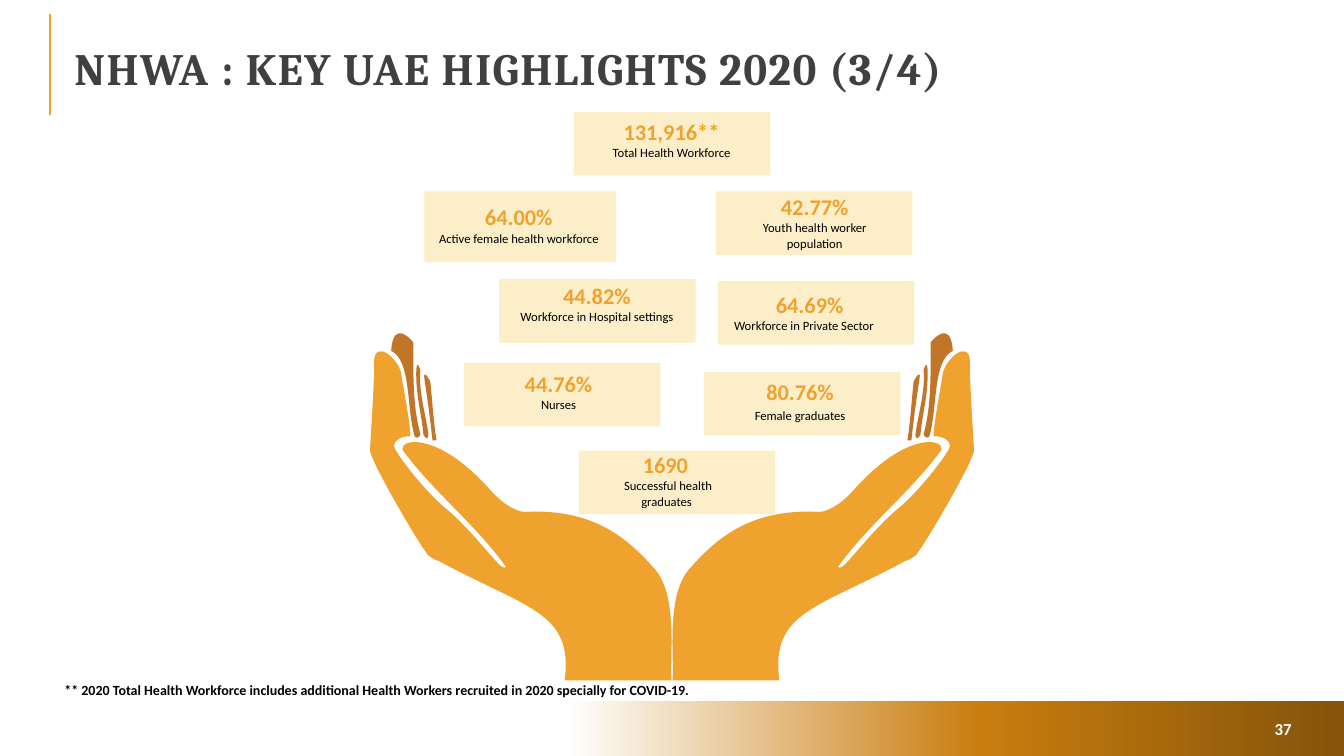
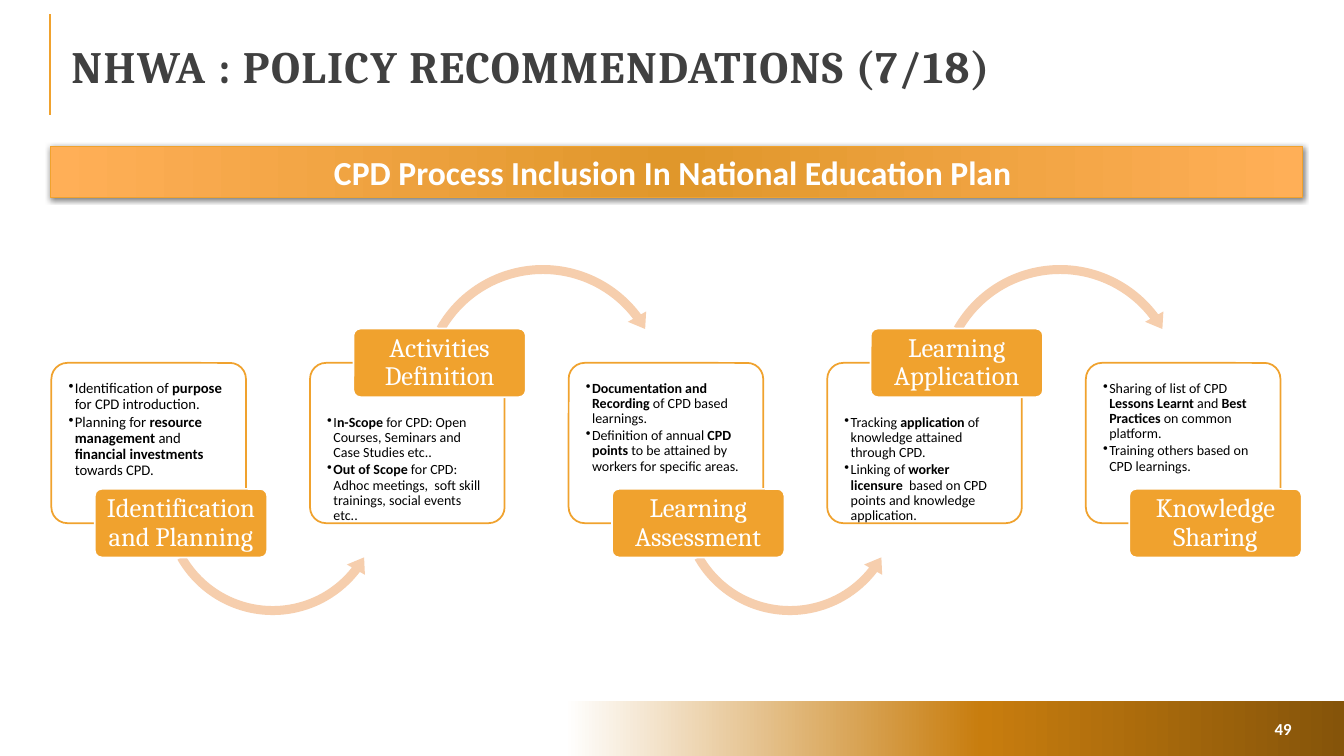
from lxml.etree import SubElement as Sub
from pptx import Presentation
from pptx.dml.color import RGBColor as RGB
from pptx.enum.shapes import MSO_CONNECTOR as CON, MSO_SHAPE as SHAPE
from pptx.enum.text import MSO_ANCHOR as ANCHOR, PP_ALIGN as ALIGN
from pptx.oxml.ns import qn
from pptx.util import Inches, Pt

INK = {
    "gold": "F0A22E", "brown": "C17529", "cream": "FBEEC9", "peach": "F6CEAD",
    "white": "FFFFFF", "black": "000000", "gray": "404040",
    "amber": "C87D0E", "dark": "85540A", "light": "FFAF57", "ochre": "E0972B",
}
BODY, HEAD = "Calibri", "Cambria"
AXIS = 13.33

PALM = [(4.22, 5.47), [
    (4.17, 5.42, 3.65, 4.54, 3.67, 4.46), (3.68, 4.28, 3.72, 3.66, 3.71, 3.58),
    (3.72, 3.37, 3.95, 3.55, 3.98, 3.71), (4, 3.85, 4.07, 4.2, 4.07, 4.33),
    (4, 4.32, 3.87, 4.37, 3.92, 4.46), (4.01, 4.61, 4.25, 4.91, 4.44, 5.06),
    (4.65, 5.24, 4.85, 5.5, 4.95, 5.6), (5, 5.65, 5.04, 5.64, 5, 5.6),
    (4.72, 5.21, 4.28, 4.86, 3.99, 4.46), (3.98, 4.34, 4.37, 4.3, 4.87, 4.87),
    (4.96, 4.97, 5.09, 5.07, 5.2, 5.08), (5.89, 5.04, 6.23, 5.35, 6.48, 5.63),
    (6.73, 5.89, 6.64, 6.5, 6.66, 6.75), (5.6, 6.75),
    (5.69, 6.07, 5.23, 6.04, 4.36, 5.57), (4.3, 5.55, 4.23, 5.51, 4.22, 5.47)]]
FINGERS = [
    [(3.88, 3.48), [
        (3.9, 3.16, 4.08, 3.37, 4.1, 3.4), (4.1, 3.7, 4.09, 4.02, 4.17, 4.31),
        (4.16, 4.35, 4.11, 4.35, 4.11, 4.32), (4.03, 4.04, 4.08, 3.58, 3.88, 3.48)]],
    [(4.13, 3.66), [
        (4.14, 3.57, 4.16, 3.65, 4.17, 3.67), (4.15, 3.88, 4.22, 4.09, 4.25, 4.31),
        (4.25, 4.35, 4.23, 4.37, 4.2, 4.31), (4.18, 4.09, 4.12, 3.91, 4.13, 3.66)]],
    [(4.21, 3.76), [
        (4.19, 3.65, 4.27, 3.77, 4.27, 3.8), (4.29, 4, 4.3, 4.18, 4.33, 4.37),
        (4.29, 4.37), (4.27, 4.17, 4.24, 3.96, 4.21, 3.76)]],
]
STATS = [
    ((7.12, 2.79, 1.95, 0.63), (7.17, 2.84, 1.72), "64.69%", "Workforce in Private Sector\t"),
    ((4.21, 1.9, 1.9, 0.7), (4.17, 1.97, 1.95), "64.00%", "Active female health workforce"),
    ((7.1, 1.9, 1.95, 0.63), (7.22, 1.87, 1.72), "42.77%", "Youth health worker population"),
    ((4.95, 2.77, 1.95, 0.63), (5.06, 2.75, 1.72), "44.82%", "Workforce in Hospital settings"),
    ((4.6, 3.6, 1.95, 0.63), (4.76, 3.62, 1.56), "44.76%", "Nurses"),
    ((6.98, 3.69, 1.95, 0.63), (6.61, 3.7, 2.65), "80.76%", "Female graduates", 2),
    ((5.74, 4.47, 1.95, 0.63), (5.99, 4.43, 1.27), "1690 ", "Successful health graduates "),
    ((5.69, 1.11, 1.95, 0.63), (5.8, 1.12, 1.72), "131,916**", "Total Health Workforce"),
]
STEPS = [
    ("Identification and Planning", 10.5, [
        "Identification of| purpose |for CPD introduction.",
        "Planning for |resource management |and| financial investments |towards CPD."]),
    ("Activities Definition", 10, [
        "I|n-Scope| for CPD: Open Courses, Seminars and Case Studies etc..",
        "|Out of Scope |for CPD: Adhoc meetings,  soft skill trainings, social events etc.."]),
    ("Learning Assessment", 10, [
        "|Documentation and Recording |of CPD based learnings.",
        "Definition of annual |CPD points |to be attained by workers for specific areas."]),
    ("Learning Application", 10, [
        "Tracking |application| of knowledge attained through CPD.",
        "Linking of |worker licensure | based on CPD points and knowledge application."]),
    ("Knowledge Sharing", 10, [
        "Sharing of list of CPD |Lessons Learnt |and |Best Practices |on common platform.",
        "Training others based on CPD learnings."]),
]


def trace(start, parts, steps=12):
    """Return points along lines and cubic curves, to size an outline."""
    dots = [start]
    for part in parts:
        if len(part) == 1:
            dots += part
            continue
        ends = [dots[-1], *part]
        for n in range(1, steps + 1):
            t = n / steps
            mix = ((1 - t) ** 3, 3 * t * (1 - t) ** 2, 3 * t * t * (1 - t), t ** 3)
            dots.append(tuple(sum(m * e[k] for m, e in zip(mix, ends)) for k in (0, 1)))
    return dots


class Deck:
    """Hold the shared style and the current slide."""

    def __init__(self):
        self.prs = Presentation()
        self.prs.slide_width, self.prs.slide_height = Inches(13.33), Inches(7.5)

    def page(self, title, num, box):
        self.slide = self.prs.slides.add_slide(self.prs.slide_layouts[6])
        self.rule(0.5, 1.14, 0.5, 0.14)
        band = self.shape(SHAPE.RECTANGLE, (0, 6.95, 13.33, 0.56), "white")
        self.blend(band, [(42, "white"), (73, "amber"), (100, "dark")])
        para = self.text(box, [title], 32, "gray", True, HEAD, mid=True)[0]
        para.line_spacing = 0.8
        para.runs[0]._r.get_or_add_rPr().set("spc", "100")
        self.text((11.85, 7.08, 1.06, 0.3), [str(num)], 12, "white", True,
                  align=ALIGN.RIGHT, mid=True)

    def rule(self, *ends):
        line = self.slide.shapes.add_connector(CON.STRAIGHT, *map(Inches, ends))
        line.line.color.rgb = RGB.from_string(INK["gold"])
        line.line.width = Pt(1.5)
        Sub(line._element.spPr, qn("a:effectLst"))

    def paint(self, shape, fill, edge=None, width=1.25):
        shape.shadow.inherit = False
        shape.fill.solid()
        shape.fill.fore_color.rgb = RGB.from_string(INK[fill])
        if edge:
            shape.line.color.rgb = RGB.from_string(INK[edge])
            shape.line.width = Pt(width)
        else:
            shape.line.fill.background()
        return shape

    def shape(self, kind, box, fill, edge=None, width=1.25, adj=()):
        shape = self.slide.shapes.add_shape(kind, *map(Inches, box))
        for n, value in enumerate(adj):
            shape.adjustments[n] = value
        return self.paint(shape, fill, edge, width)

    def blend(self, shape, stops):
        shape.fill.gradient()
        shape.fill.gradient_angle = 0
        bag = shape._element.spPr.find(qn("a:gradFill")).find(qn("a:gsLst"))
        for old in list(bag):
            bag.remove(old)
        for pos, name in stops:
            stop = Sub(bag, qn("a:gs"), pos=str(pos * 1000))
            Sub(stop, qn("a:srgbClr"), val=INK[name])

    def shade(self, shape):
        bag = shape._element.spPr.find(qn("a:effectLst"))
        cast = Sub(bag, qn("a:outerShdw"), blurRad=str(Pt(4)), dist=str(Pt(1)),
                   dir="5400000", algn="ctr", rotWithShape="0")
        Sub(Sub(cast, qn("a:srgbClr"), val=INK["black"]), qn("a:alpha"), val="50000")

    def outline(self, start, parts, fill):
        dots = [tuple(map(Inches, dot)) for dot in trace(start, parts)]
        pen = self.slide.shapes.build_freeform(*dots[0], scale=1.0)
        pen.add_line_segments(dots[1:], close=True)
        shape = self.paint(pen.convert_to_shape(), fill)
        route = next(shape._element.iter(qn("a:path")))
        for old in list(route)[1:]:
            route.remove(old)
        for part in parts:
            move = Sub(route, qn("a:cubicBezTo" if len(part) == 3 else "a:lnTo"))
            for x, y in part:
                Sub(move, qn("a:pt"), x=str(Inches(x) - shape.left), y=str(Inches(y) - shape.top))
        Sub(route, qn("a:close"))

    def font(self, run, size, color, bold=False, face=BODY):
        run.font.size, run.font.bold, run.font.name = Pt(size), bold, face
        run.font.color.rgb = RGB.from_string(INK[color])

    def text(self, box, lines, size, color, bold=False, face=BODY,
             align=ALIGN.LEFT, mid=False, pad=(0.1, 0.05)):
        frame = self.slide.shapes.add_textbox(*map(Inches, box)).text_frame
        frame.word_wrap = True
        frame.margin_left = frame.margin_right = Inches(pad[0])
        frame.margin_top = frame.margin_bottom = Inches(pad[1])
        frame.vertical_anchor = ANCHOR.MIDDLE if mid else ANCHOR.TOP
        frame.text = "\n".join(lines)
        for para in frame.paragraphs:
            para.alignment = align
            for run in para.runs:
                self.font(run, size, color, bold, face)
        return frame.paragraphs

    def hand(self, flip):
        def place(x, y):
            return (AXIS - x if flip else x, y)

        for (start, parts), fill in [(PALM, "gold")] + [(f, "brown") for f in FINGERS]:
            moves = [[place(*xy) for xy in zip(p[::2], p[1::2])] for p in parts]
            self.outline(place(*start), moves, fill)

    def stat(self, box, spot, value, label, gap=0):
        self.shape(SHAPE.RECTANGLE, box, "cream")
        paras = self.text((*spot, 0.52), [value, label], 16, "gold", True, align=ALIGN.CENTER)
        paras[1].space_before = Pt(gap)
        self.font(paras[1].runs[0], 9, "black")

    def points(self, box, lines, size):
        paras = self.text(box, [""] * len(lines), size, "black", pad=(0.14, 0.14))
        for para, line in zip(paras, lines):
            para.line_spacing, para.space_after = 0.9, Pt(1.5)
            prop = para._p.get_or_add_pPr()
            prop.set("marL", str(Pt(4.5)))
            prop.set("indent", str(-Pt(4.5)))
            Sub(prop, qn("a:buChar"), char="•")
            for n, piece in enumerate(line.split("|")):
                if piece:
                    run = para.add_run()
                    run.text = piece
                    self.font(run, size, "black", n % 2 == 1)

    def step(self, left, high, last, name, size, lines):
        card = self.shape(SHAPE.ROUNDED_RECTANGLE, (left, 3.6, 1.93, 1.59), "white", "gold",
                          adj=[0.1])
        Sub(card._element.spPr.find(qn("a:solidFill"))[0], qn("a:alpha"), val="90000")
        self.points((left + 0.03, 3.98 if high else 3.64, 1.86, 1.18), lines, size)
        if not last and high:
            self.shape(SHAPE.CIRCULAR_ARROW, (left + 1.04, 2.57, 2.54, 2.54), "peach",
                       adj=[0.035, 4.326, 193.918, 125.755, 0.041])
        elif not last:
            self.shape(SHAPE.LEFT_CIRCULAR_ARROW, (left + 1.05, 3.87, 2.29, 2.29), "peach",
                       adj=[0.039, 4.835, 22.59, 90.245, 0.045])
        top = 3.26 if high else 4.85
        self.shape(SHAPE.ROUNDED_RECTANGLE, (left + 0.43, top, 1.71, 0.68), "gold", "white",
                   adj=[0.1])
        para = self.text((left + 0.45, top + 0.02, 1.67, 0.64), [name], 19, "white", face=HEAD,
                         align=ALIGN.CENTER, mid=True, pad=(0.04, 0.03))[0]
        para.line_spacing = 0.9

    def banner(self, box, words):
        bar = self.shape(SHAPE.RECTANGLE, box, "gold", "gold", 0.75)
        self.blend(bar, [(0, "light"), (50, "ochre"), (100, "light")])
        self.shade(bar)
        bar.text_frame.text = words
        para = bar.text_frame.paragraphs[0]
        para.alignment = ALIGN.CENTER
        self.font(para.runs[0], 24, "white", True)


def main():
    deck = Deck()
    deck.page("NHWA : KEY UAE HIGHLIGHTS 2020 (3/4)", 37, (0.64, 0.48, 10.63, 0.48))
    for flip in (False, True):
        deck.hand(flip)
    for stat in STATS:
        deck.stat(*stat)
    deck.text((0.54, 6.71, 8.77, 0.27),
              ["** 2020 Total Health Workforce includes additional Health Workers "
               "recruited in 2020 specially for COVID-19."], 10, "black", True)

    deck.page("NHWA : POLICY RECOMMENDATIONS (7/18)", 49, (0.61, 0.28, 12.3, 0.84))
    for n, item in enumerate(STEPS):
        deck.step(0.51 + n * 2.565, n % 2 == 1, n == len(STEPS) - 1, *item)
    deck.banner((0.5, 1.45, 12.42, 0.51), "CPD Process Inclusion In National Education Plan ")
    deck.prs.save("out.pptx")


if __name__ == "__main__":
    main()
